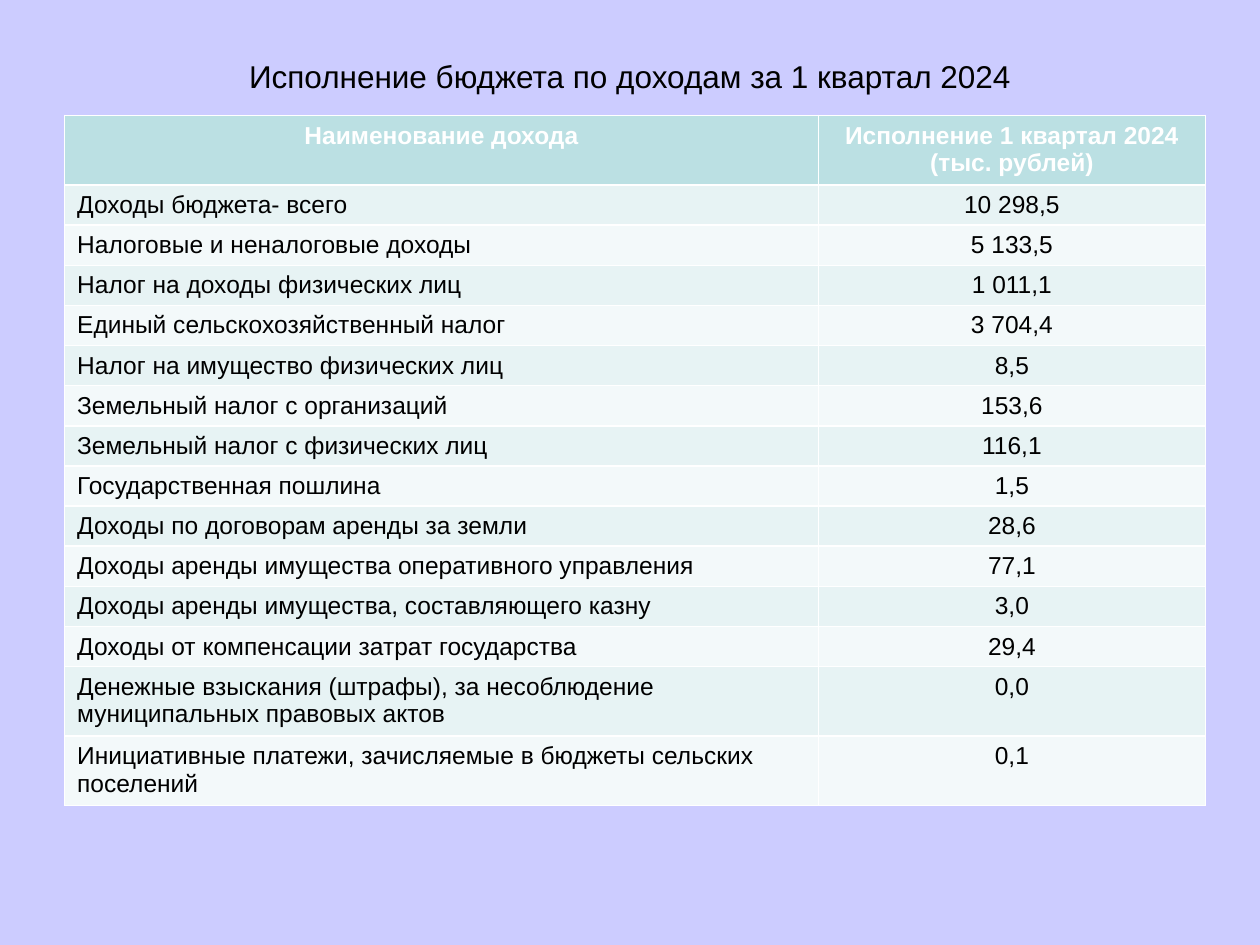
"""Build a slide with a table of budget income for one quarter."""
from pptx import Presentation
from pptx.dml.color import RGBColor
from pptx.enum.text import MSO_ANCHOR, PP_ALIGN
from pptx.util import Pt

LEFT, MID = PP_ALIGN.LEFT, PP_ALIGN.CENTER
CENTER = MSO_ANCHOR.MIDDLE
COLORS = {"back": "CCCCFF", "head": "BBE0E3", "odd": "E7F3F4",
          "even": "F3F9FA", "white": "FFFFFF", "black": "000000"}
TITLE = "Исполнение бюджета по доходам за 1 квартал 2024"
HEAD = ("Наименование дохода", "Исполнение 1 квартал 2024 (тыс. рублей)")
ROWS = [
    ("Доходы бюджета- всего", "10 298,5"),
    ("Налоговые и неналоговые доходы", "5 133,5"),
    ("Налог на доходы физических лиц", "1 011,1"),
    ("Единый сельскохозяйственный налог", "3 704,4"),
    ("Налог на имущество физических лиц", "8,5"),
    ("Земельный налог с организаций", "153,6"),
    ("Земельный налог с физических лиц", "116,1"),
    ("Государственная пошлина", "1,5"),
    ("Доходы по договорам аренды за земли", "28,6"),
    ("Доходы аренды имущества оперативного управления", "77,1"),
    ("Доходы аренды имущества, составляющего казну", "3,0"),
    ("Доходы от компенсации затрат государства", "29,4"),
    ("Денежные взыскания (штрафы), за несоблюдение муниципальных правовых актов", "0,0"),
    ("Инициативные платежи, зачисляемые в бюджеты сельских поселений", "0,1"),
]
WIDTHS = (430.7, 221.3)
TALL, LOW, LAST = 39.7, 22.95, 38.6
HEIGHTS = [TALL] + [LOW] * 12 + [TALL, LAST]


def color(name):
    return RGBColor.from_string(COLORS[name])


def write(frame, text, align, ink, **form):
    para = frame.paragraphs[0]
    para.alignment = align
    run = para.add_run()
    run.text = text
    for key, value in {"name": "Arial", **form}.items():
        setattr(run.font, key, value)
    run.font.color.rgb = color(ink)


def add_title(slide):
    box = slide.shapes.add_textbox(Pt(36), Pt(26.5), Pt(648), Pt(34))
    box.text_frame.word_wrap = True
    box.text_frame.vertical_anchor = CENTER
    write(box.text_frame, TITLE, MID, "black", size=Pt(18))


def fill_cell(cell, text, row, col):
    head = row == 0
    cell.margin_bottom = Pt(2.5)
    cell.fill.solid()
    cell.fill.fore_color.rgb = color("head" if head else "odd" if row % 2 else "even")
    write(cell.text_frame, text, MID if head or col else LEFT,
          "white" if head else "black", size=Pt(14), bold=head)


def add_grid(slide):
    data = [HEAD, *ROWS]
    frame = slide.shapes.add_table(len(data), len(HEAD), Pt(36.9), Pt(66),
                                   Pt(sum(WIDTHS)), Pt(sum(HEIGHTS)))
    table = frame.table
    for col, width in zip(table.columns, WIDTHS):
        col.width = Pt(width)
    for row, height in zip(table.rows, HEIGHTS):
        row.height = Pt(height)
    for row, texts in enumerate(data):
        for col, text in enumerate(texts):
            fill_cell(table.cell(row, col), text, row, col)


def main():
    deck = Presentation()
    deck.slide_width, deck.slide_height = Pt(720), Pt(540)
    slide = deck.slides.add_slide(deck.slide_layouts[6])
    slide.background.fill.solid()
    slide.background.fill.fore_color.rgb = color("back")
    add_title(slide)
    add_grid(slide)
    deck.save("out.pptx")


if __name__ == "__main__":
    main()
